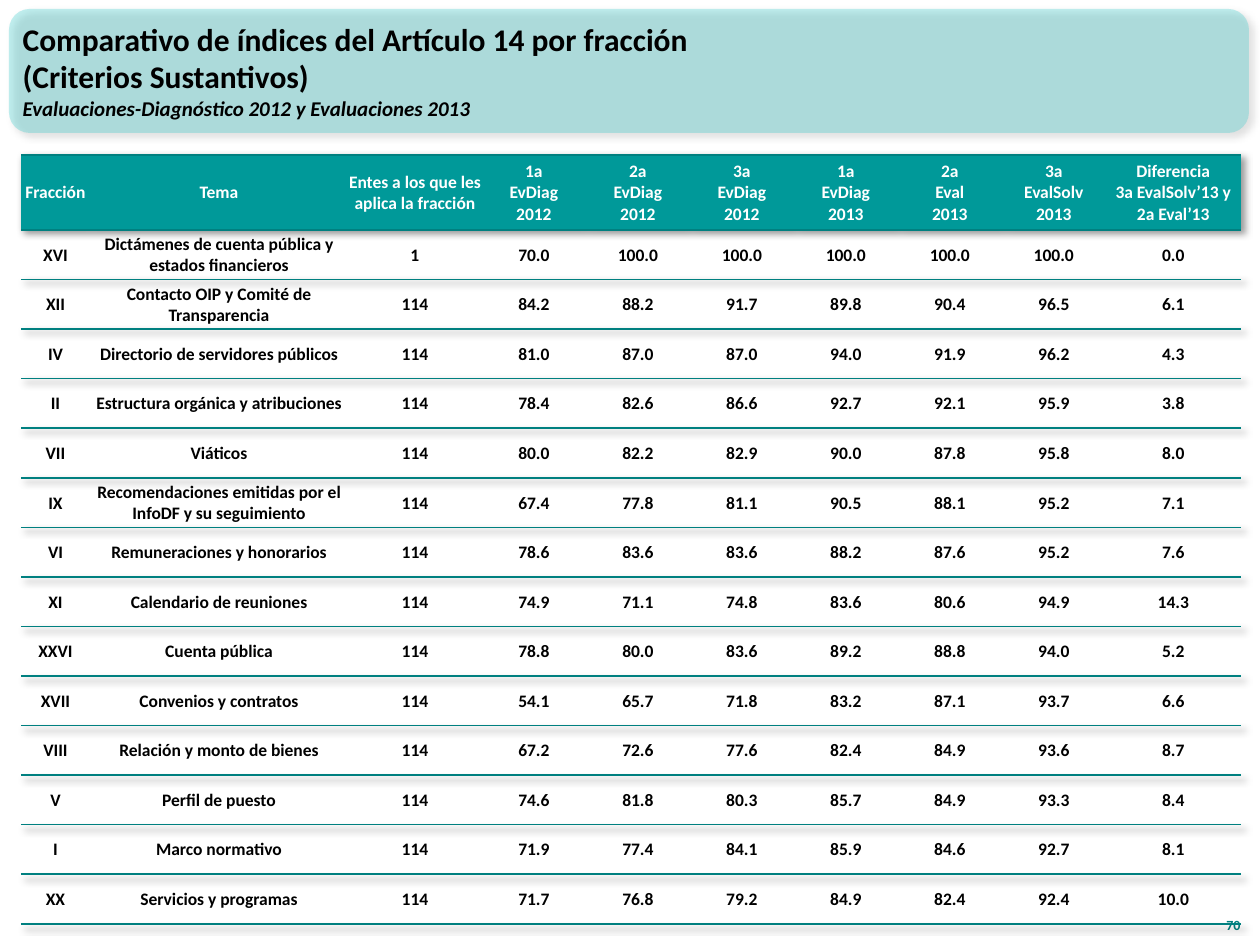
import dataclasses
import pptx
import pptx.util
import pptx.oxml
import pptx.dml.color
import pptx.enum.shapes
import pptx.enum.text

NS = 'xmlns:a="http://schemas.openxmlformats.org/drawingml/2006/main"'
PLAIN = "{2D5ABB26-0587-4C30-8999-92F81FD0307C}"
ALIGN = pptx.enum.text.PP_ALIGN
ANCHOR = pptx.enum.text.MSO_ANCHOR


@dataclasses.dataclass(frozen=True)
class Theme:
    """Colours, font and type sizes of the slide."""
    font: str = "Calibri"
    ink: str = "000000"
    paper: str = "FFFFFF"
    band: str = "33CCCC"
    head: str = "009999"
    rule: str = "008080"
    title: int = 18
    sub: int = 12
    body: int = 10
    page: int = 8


THEME = Theme()
COLS = [69, 258, 134] + [104] * 6 + [135]
HEADS = [
    "Fracción", "Tema", "Entes a los que les aplica la fracción",
    "1a\vEvDiag\v2012", "2a\vEvDiag\v2012", "3a\vEvDiag\v2012",
    "1a\vEvDiag\v2013", "2a\vEval\v2013", "3a\nEvalSolv\n2013",
    "Diferencia\n3a EvalSolv’13 y\n2a Eval’13",
]
ROWS = [
    ("XVI", "Dictámenes de cuenta pública y estados financieros", 1, 70.0, 100.0, 100.0, 100.0, 100.0, 100.0, 0.0),
    ("XII", "Contacto OIP y Comité de Transparencia", 114, 84.2, 88.2, 91.7, 89.8, 90.4, 96.5, 6.1),
    ("IV", "Directorio de servidores públicos", 114, 81.0, 87.0, 87.0, 94.0, 91.9, 96.2, 4.3),
    ("II", "Estructura orgánica y atribuciones", 114, 78.4, 82.6, 86.6, 92.7, 92.1, 95.9, 3.8),
    ("VII", "Viáticos", 114, 80.0, 82.2, 82.9, 90.0, 87.8, 95.8, 8.0),
    ("IX", "Recomendaciones emitidas por el InfoDF y su seguimiento", 114, 67.4, 77.8, 81.1, 90.5, 88.1, 95.2, 7.1),
    ("VI", "Remuneraciones y honorarios", 114, 78.6, 83.6, 83.6, 88.2, 87.6, 95.2, 7.6),
    ("XI", "Calendario de reuniones", 114, 74.9, 71.1, 74.8, 83.6, 80.6, 94.9, 14.3),
    ("XXVI", "Cuenta pública", 114, 78.8, 80.0, 83.6, 89.2, 88.8, 94.0, 5.2),
    ("XVII", "Convenios y contratos", 114, 54.1, 65.7, 71.8, 83.2, 87.1, 93.7, 6.6),
    ("VIII", "Relación y monto de bienes", 114, 67.2, 72.6, 77.6, 82.4, 84.9, 93.6, 8.7),
    ("V", "Perfil de puesto", 114, 74.6, 81.8, 80.3, 85.7, 84.9, 93.3, 8.4),
    ("I", "Marco normativo", 114, 71.9, 77.4, 84.1, 85.9, 84.6, 92.7, 8.1),
    ("XX", "Servicios y programas", 114, 71.7, 76.8, 79.2, 84.9, 82.4, 92.4, 10.0),
]


def px(num):
    """Turn px into EMU."""
    return round(num * 914400 / 126)


def rgb(code):
    """Turn a hex code into a colour."""
    return pptx.dml.color.RGBColor.from_string(code)


def style(para, size, color, align, slant=False):
    """Format the runs of a paragraph."""
    para.alignment = align
    for run in para.runs:
        font = run.font
        font.name, font.size = THEME.font, pptx.util.Pt(size)
        font.bold, font.italic = True, slant
        font.color.rgb = rgb(color)


def shadow():
    """Make a soft shadow to the lower right."""
    return pptx.oxml.parse_xml(
        f'<a:effectLst {NS}><a:outerShdw blurRad="50800" dist="38100" dir="2700000" algn="tl" rotWithShape="0">'
        f'<a:srgbClr val="{THEME.ink}"><a:alpha val="40000"/></a:srgbClr></a:outerShdw></a:effectLst>')


def border(side):
    """Make a one-point rule for a cell side."""
    return pptx.oxml.parse_xml(
        f'<a:{side} {NS} w="12700"><a:solidFill><a:srgbClr val="{THEME.rule}"/></a:solidFill></a:{side}>')


def banner(slide, x, y, w, h):
    """Draw the title band with its heading."""
    kind = pptx.enum.shapes.MSO_SHAPE.ROUNDED_RECTANGLE
    band = slide.shapes.add_shape(kind, px(x), px(y), px(w), px(h))
    band.fill.solid()
    band.fill.fore_color.rgb = rgb(THEME.band)
    tint = band.fill._xPr.find(".//{*}srgbClr")
    tint.append(pptx.oxml.parse_xml(f'<a:alpha {NS} val="30000"/>'))
    band.line.fill.background()
    band._element.spPr.append(shadow())

    title = slide.shapes.title
    band._element.addnext(title._element)
    title.left, title.top = px(x + 1), px(y + 2)
    title.width, title.height = px(w - 84), px(h - 6)
    frame = title.text_frame
    frame.word_wrap = True
    frame.auto_size = pptx.enum.text.MSO_AUTO_SIZE.NONE
    frame.vertical_anchor = ANCHOR.MIDDLE
    frame.text = ("Comparativo de índices del Artículo 14 por fracción\n(Criterios Sustantivos)\n"
                  "Evaluaciones-Diagnóstico 2012 y Evaluaciones 2013")
    *main, sub = frame.paragraphs
    for para in main:
        style(para, THEME.title, THEME.ink, ALIGN.LEFT)
    style(sub, THEME.sub, THEME.ink, ALIGN.LEFT, True)


def number(slide, x, y, w, h):
    """Place the page number."""
    frame = slide.shapes.add_textbox(px(x), px(y), px(w), px(h)).text_frame
    frame.word_wrap = True
    frame.vertical_anchor = ANCHOR.BOTTOM
    frame.text = "70"
    style(frame.paragraphs[0], THEME.page, THEME.rule, ALIGN.RIGHT)


def fill(cell, text, head):
    """Write and format one table cell."""
    cell.margin_left = cell.margin_right = cell.margin_top = px(1)
    cell.margin_bottom = 0
    cell.vertical_anchor = ANCHOR.MIDDLE
    cell.text_frame.text = text
    for para in cell.text_frame.paragraphs:
        style(para, THEME.body, THEME.paper if head else THEME.ink, ALIGN.CENTER)
    if head:
        cell.fill.solid()
        cell.fill.fore_color.rgb = rgb(THEME.head)
    else:
        cell.fill.background()
    props = cell._tc.get_or_add_tcPr()
    for spot, side in enumerate(("lnT", "lnB")):
        props.insert(spot, border(side))


def grid(slide, x, y, w, h, top):
    """Build the table of indices, with a heading row of height top."""
    shape = slide.shapes.add_table(len(ROWS) + 1, len(COLS), px(x), px(y), px(w), px(h))
    table = shape.table
    table.horz_banding = False
    props = table._tbl.tblPr
    props.find("{*}tableStyleId").text = PLAIN
    props.insert(0, shadow())
    for col, wide in zip(table.columns, COLS):
        col.width = px(wide)
    for pos, row in enumerate([HEADS] + ROWS):
        table.rows[pos].height = px((h - top) / len(ROWS)) if pos else px(top)
        for cell, value in zip(table.rows[pos].cells, row):
            fill(cell, str(value), pos == 0)


def main():
    """Build and save the slide."""
    deck = pptx.Presentation()
    deck.slide_width, deck.slide_height = px(1260), px(945)
    slide = deck.slides.add_slide(deck.slide_layouts[5])
    banner(slide, 9, 9, 1240, 124)
    number(slide, 1203, 890, 50, 50)
    grid(slide, 21, 155, sum(COLS), 769, 75)
    deck.save("out.pptx")


if __name__ == "__main__":
    main()
